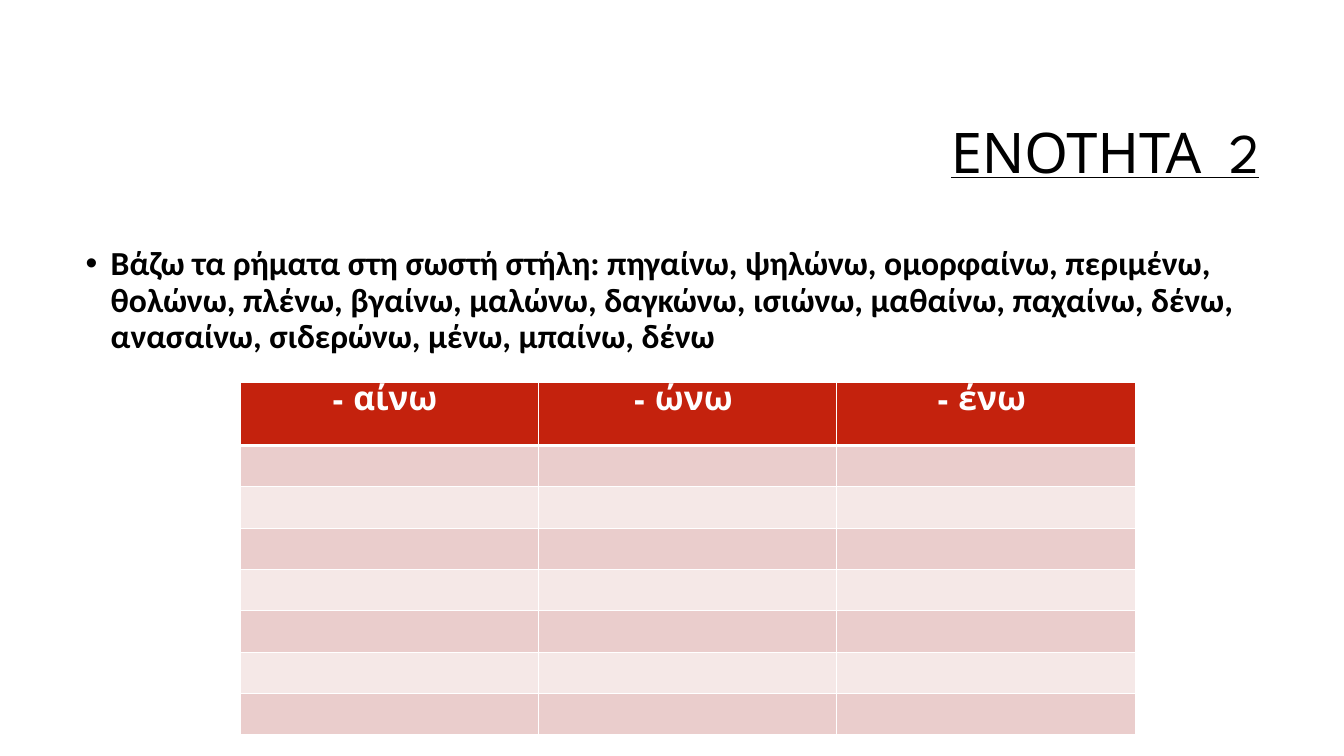
from lxml import etree
from pptx import Presentation
from pptx import util as u
from pptx.dml.color import RGBColor
from pptx.enum import text
from pptx.oxml import ns

TITLE = "ΕΝΟΤΗΤΑ  2"
TASK = (
    "Βάζω τα ρήματα στη σωστή στήλη: πηγαίνω, ψηλώνω, ομορφαίνω, περιμένω, "
    "θολώνω, πλένω, βγαίνω, μαλώνω, δαγκώνω, ισιώνω, μαθαίνω, παχαίνω, δένω, "
    "ανασαίνω, σιδερώνω, μένω, μπαίνω, δένω"
)
ENDINGS = ["- αίνω ", "- ώνω ", "- ένω "]
ANSWER_ROWS = 7
COLORS = {
    "text": "000000",
    "white": "FFFFFF",
    "header": "C4220D",
    "odd": "EACDCC",
    "even": "F5E8E7",
}
HEADER_HEIGHT, ROW_HEIGHT, COL_WIDTH = 0.63, 0.41, 2.96


def rgb(name):
    return RGBColor.from_string(COLORS[name])


def write(tf, content, size=24, font="League Spartan", color="text",
          align=text.PP_ALIGN.LEFT, bold=False, underline=False,
          spacing=None, bullet=None):
    p = tf.paragraphs[0]
    p.alignment = align
    p.line_spacing = spacing
    if bullet:
        pPr = p._p.get_or_add_pPr()
        pPr.set("marL", str(u.Inches(0.25)))
        pPr.set("indent", str(u.Inches(-0.25)))
        etree.SubElement(pPr, ns.qn("a:buFont"), typeface="Arial")
        etree.SubElement(pPr, ns.qn("a:buChar"), char=bullet)
    r = p.add_run()
    r.text = content
    r.font.size = u.Pt(size)
    r.font.name = font
    r.font.bold = bold
    r.font.underline = underline
    r.font.color.rgb = rgb(color)


def add_box(slide, left, top, width, height, anchor):
    sp = slide.shapes.add_textbox(*map(u.Inches, (left, top, width, height)))
    tf = sp.text_frame
    tf.word_wrap = True
    tf.vertical_anchor = anchor
    return tf


def set_borders(cell, widths):
    tcPr = cell._tc.get_or_add_tcPr()
    for i, (side, width) in enumerate(widths.items()):
        ln = etree.Element(ns.qn(f"a:{side}"), w=str(u.Pt(width)))
        fill = etree.SubElement(ln, ns.qn("a:solidFill"))
        etree.SubElement(fill, ns.qn("a:srgbClr"), val=COLORS["white"])
        tcPr.insert(i, ln)


def add_verb_table(slide):
    rows, cols = ANSWER_ROWS + 1, len(ENDINGS)
    heights = [HEADER_HEIGHT] + [ROW_HEIGHT] * ANSWER_ROWS
    table = slide.shapes.add_table(
        rows, cols, u.Inches(2.38), u.Inches(3.79),
        u.Inches(COL_WIDTH * cols), u.Inches(sum(heights))).table
    for col in table.columns:
        col.width = u.Inches(COL_WIDTH)
    for i, height in enumerate(heights):
        table.rows[i].height = u.Inches(height)
        shade = "header" if i == 0 else "odd" if i % 2 else "even"
        borders = {"lnL": 1, "lnR": 1, "lnT": 3 if i == 1 else 1,
                   "lnB": 3 if i == 0 else 1}
        for j, ending in enumerate(ENDINGS):
            cell = table.cell(i, j)
            cell.fill.solid()
            cell.fill.fore_color.rgb = rgb(shade)
            set_borders(cell, borders)
            if i == 0:
                write(cell.text_frame, ending, color="white", bold=True,
                      align=text.PP_ALIGN.CENTER)


def main():
    prs = Presentation()
    prs.slide_width, prs.slide_height = u.Inches(13.33), u.Inches(7.5)
    slide = prs.slides.add_slide(prs.slide_layouts[6])
    write(add_box(slide, 3.17, 0.84, 9.42, 1.41, text.MSO_ANCHOR.MIDDLE),
          TITLE, size=40, align=text.PP_ALIGN.RIGHT, underline=True,
          spacing=0.9)
    write(add_box(slide, 0.75, 2.4, 11.83, 4.4, text.MSO_ANCHOR.TOP),
          TASK, font="Calibri", bold=True, spacing=0.9, bullet="•")
    add_verb_table(slide)
    prs.save("out.pptx")


if __name__ == "__main__":
    main()
